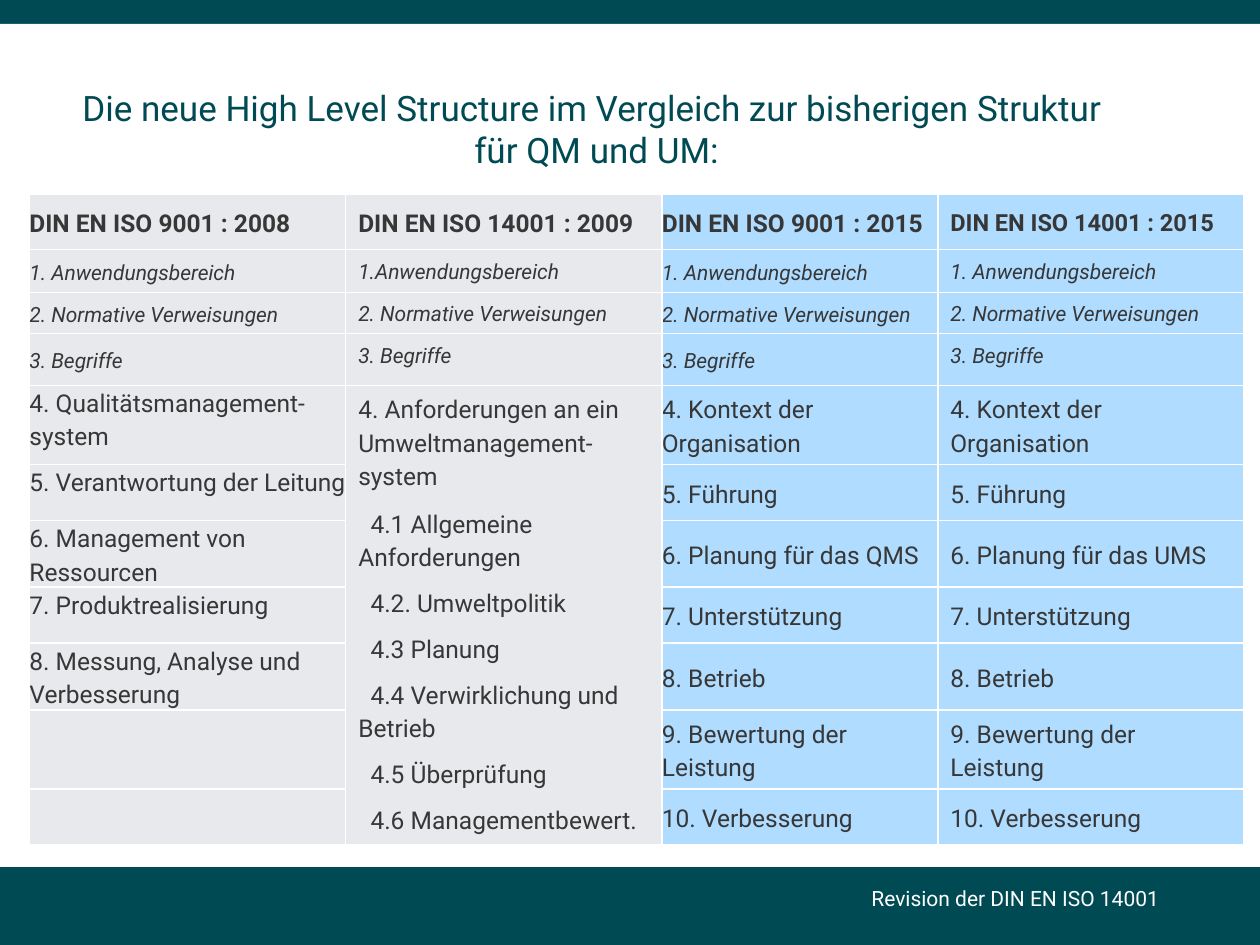
from pptx import Presentation
from pptx.dml.color import RGBColor
from pptx.enum.shapes import MSO_SHAPE
from pptx.enum.text import MSO_ANCHOR, MSO_AUTO_SIZE, PP_ALIGN
from pptx.oxml import parse_xml
from pptx.oxml.ns import nsdecls
from pptx.util import Pt

RECT = MSO_SHAPE.RECTANGLE
TOP, MID = MSO_ANCHOR.TOP, MSO_ANCHOR.MIDDLE
CENTER, RIGHT = PP_ALIGN.CENTER, PP_ALIGN.RIGHT
FIXED = MSO_AUTO_SIZE.NONE

TEAL = RGBColor(0x00, 0x4A, 0x54)
WHITE = RGBColor(0xFF, 0xFF, 0xFF)
INK = RGBColor(0x37, 0x37, 0x37)
GREY = RGBColor(0xE7, 0xE9, 0xEC)
BLUE = RGBColor(0xAF, 0xDC, 0xFF)

TITLE = ("Die neue High Level Structure im Vergleich zur bisherigen Struktur \v"
         "für QM und UM:")
FOOTER = "Revision der DIN EN ISO 14001"

# Table content, one list per column
INTRO = ["1. Anwendungsbereich", "2. Normative Verweisungen", "3. Begriffe"]
OLD_QM = ["DIN EN ISO 9001 : 2008", *INTRO,
          "4. Qualitätsmanagement-system", "5. Verantwortung der Leitung",
          "6. Management von Ressourcen", "7. Produktrealisierung",
          "8. Messung, Analyse und Verbesserung", "", ""]
OLD_UM = ["DIN EN ISO 14001 : 2009", "1.Anwendungsbereich", *INTRO[1:],
          "4. Anforderungen an ein Umweltmanagement-system\n"
          "4.1 Allgemeine Anforderungen\n4.2. Umweltpolitik\n4.3 Planung\n"
          "4.4 Verwirklichung und Betrieb\n4.5 Überprüfung\n"
          "4.6 Managementbewert."]


def new_list(norm, kind):
    return [f"DIN EN ISO {norm} : 2015", *INTRO, "4. Kontext der Organisation",
            "5. Führung", f"6. Planung für das {kind}", "7. Unterstützung",
            "8. Betrieb", "9. Bewertung der Leistung", "10. Verbesserung"]


COLS = [OLD_QM, OLD_UM, new_list("9001", "QMS"), new_list("14001", "UMS")]
WIDTHS = [180.72, 180.72, 157.68, 174.96]
HEIGHTS = [31.7, 24.5, 23.5, 29.7, 45, 32, 38, 32, 38, 45, 32]
BODY = 4  # first row of the main chapters


def style(obj, form):
    for name, value in form.items():
        setattr(obj, name, value)


def add_bar(slide, top, height, color):
    bar = slide.shapes.add_shape(RECT, 0, Pt(top), Pt(720), Pt(height))
    bar.shadow.inherit = False
    bar.fill.solid()
    bar.fill.fore_color.rgb = color
    bar.line.fill.background()


def fill_text(shape, box, text, size, color, align):
    style(shape, dict(zip(("left", "top", "width", "height"), map(Pt, box))))
    frame = shape.text_frame
    style(frame, {"word_wrap": True, "auto_size": FIXED,
                  "vertical_anchor": TOP, "text": text})
    para = frame.paragraphs[0]
    style(para, {"alignment": align, "line_spacing": 1.0, "space_before": Pt(0)})
    style(para.font, {"name": "Roboto", "size": Pt(size)})
    para.font.color.rgb = color


def add_edges(cell):
    props = cell._tc.get_or_add_tcPr()
    for side in "LRTB":
        props.append(parse_xml(
            f'<a:ln{side} {nsdecls("a")} w="12700"><a:solidFill>'
            f'<a:srgbClr val="{WHITE}"/></a:solidFill></a:ln{side}>'))


def fill_cell(cell, text, row, col):
    add_edges(cell)
    cell.fill.solid()
    cell.fill.fore_color.rgb = GREY if col < 2 else BLUE
    # Standards for quality sit flush left, those for environment are inset
    if col in (0, 2):
        style(cell, dict.fromkeys(("margin_left", "margin_right",
                                   "margin_top", "margin_bottom"), 0))
        high = col == 0 and row >= BODY
    else:
        high = 0 < row < BODY or (col == 1 and row == BODY)
    cell.vertical_anchor = TOP if high else MID
    cell.text = text
    size = 13.5 if (row, col) == (0, 3) else 12 if 0 < row < BODY else 14
    for num, para in enumerate(cell.text_frame.paragraphs):
        if num:
            para._p.get_or_add_pPr().set("indent", str(Pt(7)))
        gap = 0 if num == 0 else 8.4 if num == 1 else 7.2
        style(para, {"line_spacing": 1.15, "space_before": Pt(gap)})
        style(para.font, {"name": "Roboto", "size": Pt(size),
                          "bold": row == 0, "italic": 0 < row < BODY})
        para.font.color.rgb = INK


def add_grid(slide):
    grid = slide.shapes.add_table(
        len(HEIGHTS), len(COLS), Pt(16.8), Pt(110.9),
        Pt(sum(WIDTHS)), Pt(sum(HEIGHTS))).table
    style(grid, {"first_row": False, "horz_banding": False})
    for col, width in zip(grid.columns, WIDTHS):
        col.width = Pt(width)
    for row, height in zip(grid.rows, HEIGHTS):
        row.height = Pt(height)
    grid.cell(BODY, 1).merge(grid.cell(len(HEIGHTS) - 1, 1))
    for col, texts in enumerate(COLS):
        for row, text in enumerate(texts):
            fill_cell(grid.cell(row, col), text, row, col)


def main():
    deck = Presentation()
    style(deck, {"slide_width": Pt(720), "slide_height": Pt(540)})
    slide = deck.slides.add_slide(deck.slide_layouts[5])

    # Teal frame with white panel
    add_bar(slide, 0, 540, TEAL)
    add_bar(slide, 13.7, 481.7, WHITE)

    # Comparison table
    add_grid(slide)

    # Title, brought in front of the panel
    title = slide.shapes.title
    fill_text(title, (18, 46, 645.8, 54), TITLE, 20, TEAL, CENTER)
    slide.shapes._spTree.append(title._element)

    # Footer
    foot = slide.shapes.add_textbox(0, 0, 0, 0)
    fill_text(foot, (203.8, 502.6, 465.8, 19.4), FOOTER, 12, WHITE, RIGHT)

    deck.save("out.pptx")


if __name__ == "__main__":
    main()
